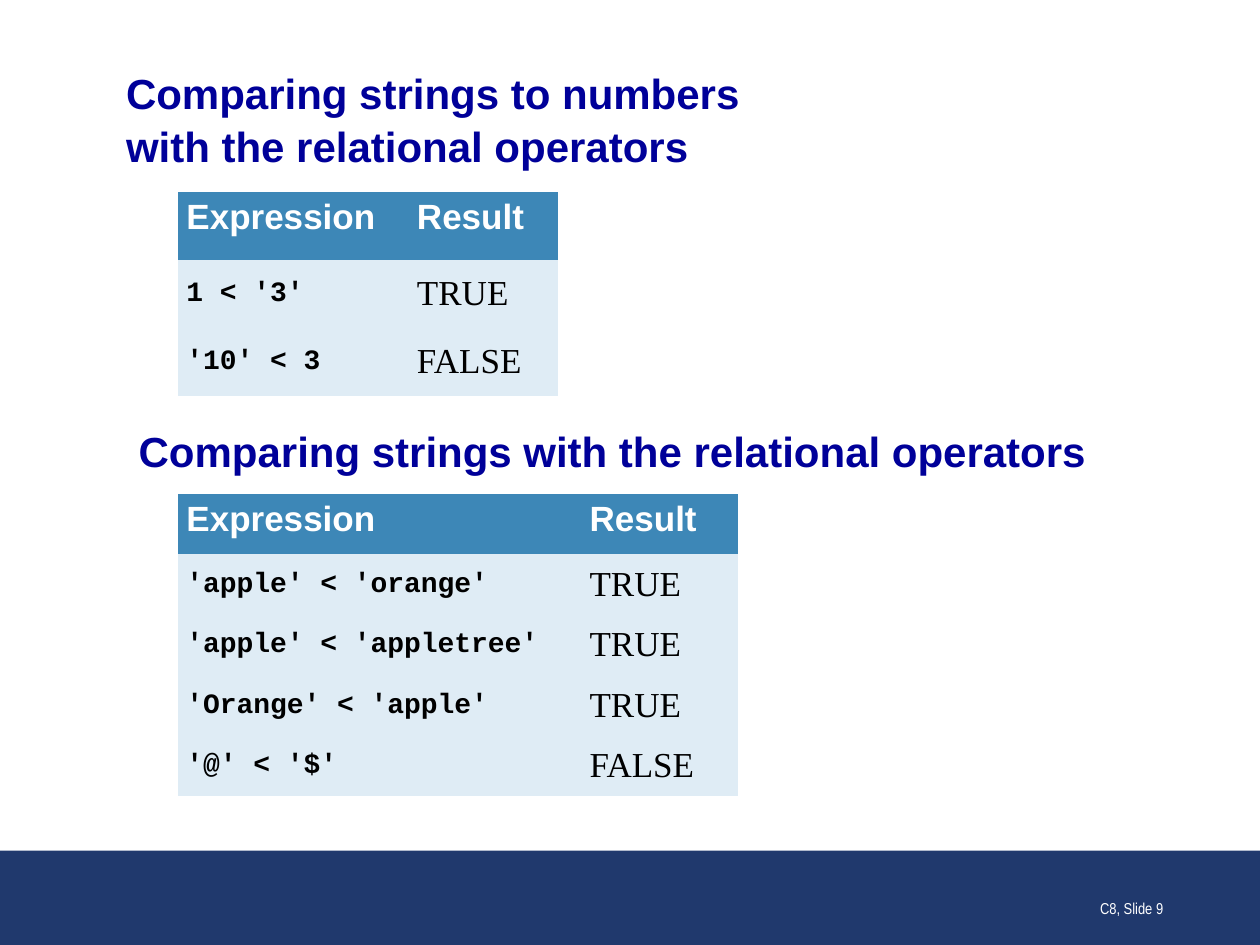
from pptx import Presentation
from pptx.dml.color import RGBColor
from pptx.enum.shapes import MSO_SHAPE
from pptx.enum.text import MSO_ANCHOR, MSO_AUTO_SIZE, PP_ALIGN
from pptx.oxml.ns import qn
from pptx.util import Inches, Pt
from lxml.etree import SubElement

WIDTH, HEIGHT = 10, 7.5
NAVY, BLUE, PALE, HEADING = "20396D", "3D87B7", "DFECF5", "000099"
WHITE, BLACK = "FFFFFF", "000000"
PLAIN_GRID = "{2D5ABB26-0587-4C30-8999-92F81FD0307C}"

TITLE = "Comparing strings to numbers\vwith the relational operators"
SUBTITLE = "Comparing strings with the relational operators"
FOOTER = "C8, Slide 9"
HEADER = ("Expression", "Result")
TABLES = [
    {
        "place": (1.41, 1.52), "columns": (1.83, 1.19), "row": 0.54,
        "rows": [("1 < '3'", "TRUE"), ("'10' < 3", "FALSE")],
    },
    {
        "place": (1.41, 3.92), "columns": (3.2, 1.25), "row": 0.48,
        "rows": [
            ("'apple' < 'orange'", "TRUE"),
            ("'apple' < 'appletree'", "TRUE"),
            ("'Orange' < 'apple'", "TRUE"),
            ("'@' < '$'", "FALSE"),
        ],
    },
]
HEADER_STYLE = ("Arial", 20, WHITE, True)
BODY_STYLES = [("Courier New", 16, BLACK, True), ("Times New Roman", 20, BLACK, False)]
HEADING_STYLE = ("Arial", 24, HEADING, True)
FOOTER_STYLE = ("Arial Narrow", 9, WHITE, False)


def paint(color_format, color):
    color_format.rgb = RGBColor.from_string(color)


def fill(target, color):
    target.fill.solid()
    paint(target.fill.fore_color, color)


def write(frame, text, style, align=PP_ALIGN.LEFT):
    name, size, color, bold = style
    frame.text = text
    para = frame.paragraphs[0]
    para.alignment = align
    for span in para.runs:
        span.font.name, span.font.size, span.font.bold = name, Pt(size), bold
        paint(span.font.color, color)
    return para


def place(shape, left, top, width, height):
    shape.left, shape.top = Inches(left), Inches(top)
    shape.width, shape.height = Inches(width), Inches(height)


def add_heading(shape, text, area, anchor):
    place(shape, *area)
    frame = shape.text_frame
    frame.auto_size, frame.word_wrap = MSO_AUTO_SIZE.NONE, True
    frame.vertical_anchor = anchor
    para = write(frame, text, HEADING_STYLE)
    para.space_before = Pt(0)
    return para


def add_grid(page, place, columns, row, rows):
    lines = [HEADER, *rows]
    left, top = place
    graphic = page.shapes.add_table(
        len(lines), len(columns), Inches(left), Inches(top),
        Inches(sum(columns)), Inches(row * len(lines)))
    table = graphic.table
    graphic.element.find(".//" + qn("a:tableStyleId")).text = PLAIN_GRID
    table.horz_banding = False
    for column, width in zip(table.columns, columns):
        column.width = Inches(width)
    for index, line in enumerate(lines):
        table.rows[index].height = Inches(row)
        for number, text in enumerate(line):
            cell = table.cell(index, number)
            cell.margin_left = cell.margin_right = Inches(0.07)
            cell.margin_top = cell.margin_bottom = Inches(0.05)
            cell.vertical_anchor = MSO_ANCHOR.MIDDLE if index else MSO_ANCHOR.TOP
            fill(cell, PALE if index else BLUE)
            write(cell.text_frame, text, BODY_STYLES[number] if index else HEADER_STYLE)


def main():
    deck = Presentation()
    deck.slide_width, deck.slide_height = Inches(WIDTH), Inches(HEIGHT)
    page = deck.slides.add_slide(deck.slide_layouts[1])

    band = page.shapes.add_shape(MSO_SHAPE.RECTANGLE, 0, 0, 0, 0)
    place(band, 0, HEIGHT * 0.9, WIDTH, HEIGHT * 0.1)
    band.shadow.inherit = False
    fill(band, NAVY)
    band.line.fill.background()

    title = page.shapes.title
    para = add_heading(title, TITLE, (1, 0.53, 8, 0.81), MSO_ANCHOR.MIDDLE)
    para.line_spacing = 1.05
    frame = title.text_frame
    frame.margin_left = frame.margin_right = frame.margin_top = frame.margin_bottom = 0

    para = add_heading(page.placeholders[1], SUBTITLE, (1, 3.33, 8, 0.58), MSO_ANCHOR.TOP)
    properties = para._p.get_or_add_pPr()
    properties.set("marL", "0")
    properties.set("indent", "0")
    SubElement(properties, qn("a:buNone"))

    for table in TABLES:
        add_grid(page, **table)

    footer = page.shapes.add_textbox(0, 0, 0, 0)
    place(footer, 7.25, 6.83, 2.08, 0.5)
    footer.text_frame.word_wrap = True
    footer.text_frame.vertical_anchor = MSO_ANCHOR.BOTTOM
    write(footer.text_frame, FOOTER, FOOTER_STYLE, PP_ALIGN.RIGHT)

    deck.save("out.pptx")


if __name__ == "__main__":
    main()
